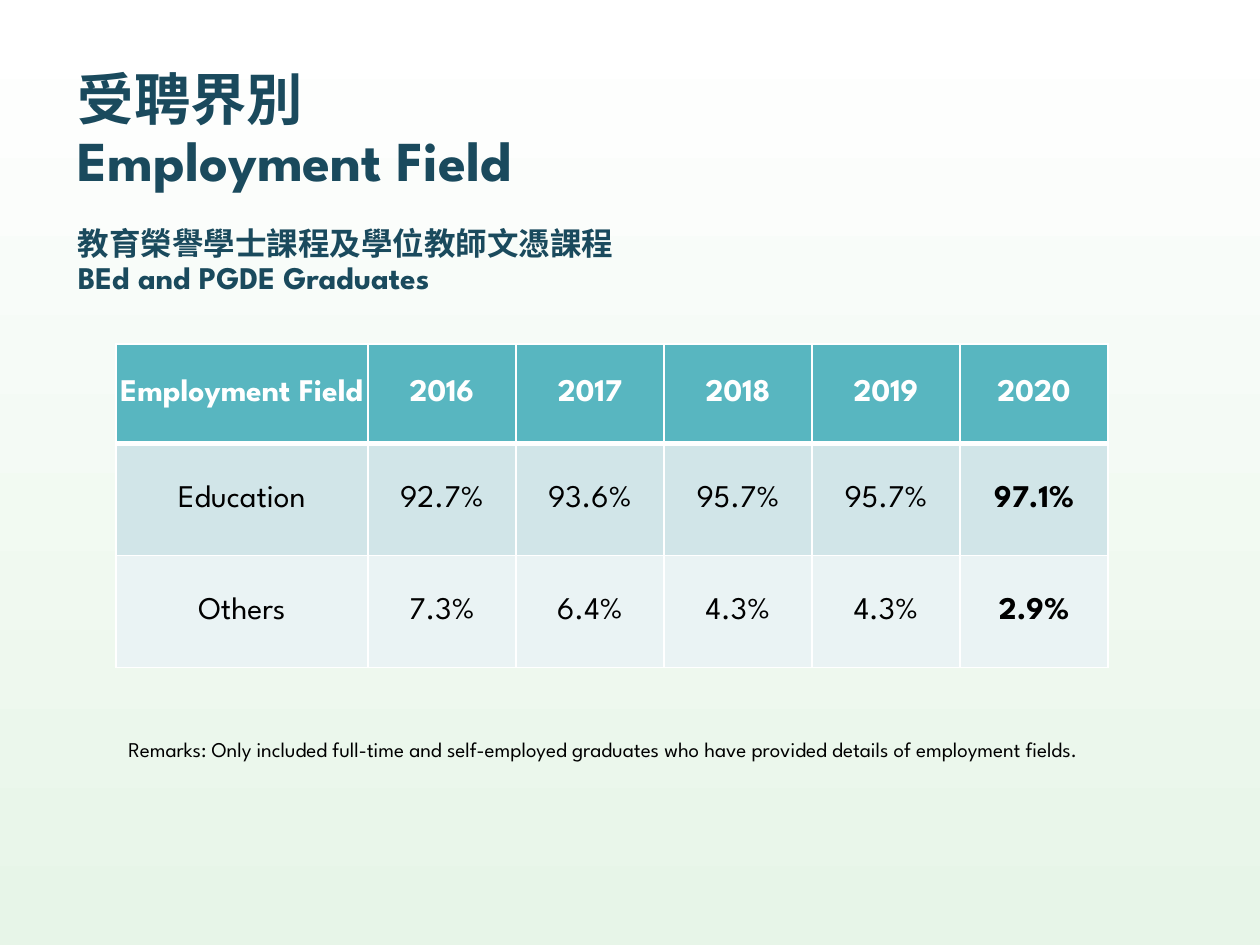
"""Build the employment field slide with its table of percentages by year."""
from lxml.etree import SubElement
from pptx import Presentation
from pptx.dml.color import RGBColor
from pptx.enum.text import MSO_ANCHOR, PP_ALIGN
from pptx.oxml.ns import qn
from pptx.util import Inches, Pt

FONT = "League Spartan"
COLORS = {
    "top": "FFFFFF", "bottom": "E7F5E8", "title": "1A4A5D", "text": "000000",
    "white": "FFFFFF", "header": "58B6C0", "dark_band": "D1E5E8", "light_band": "EAF3F4",
}
HEADING = [
    ("受聘界別", 32.2, 0),
    ("Employment Field", 32.2, 0),
    ("教育榮譽學士課程及學位教師文憑課程", 18, 20),
    ("BEd and PGDE Graduates", 18, 0),
]
REMARK = ("Remarks: Only included full-time and self-employed graduates "
          "who have provided details of employment fields.")
ROWS = [
    ("Employment Field", "2016", "2017", "2018", "2019", "2020"),
    ("Education", "92.7%", "93.6%", "95.7%", "95.7%", "97.1%"),
    ("Others", "7.3%", "6.4%", "4.3%", "4.3%", "2.9%"),
]
ROW_FILLS = ["header", "dark_band", "light_band"]
ROW_HEIGHTS = [0.79, 0.89, 0.89]
COLUMN_WIDTHS = [2] + [1.175] * 5


def color(name):
    return RGBColor.from_string(COLORS[name])


def add_span(paragraph, text, size, color_name, bold=False):
    span = paragraph.add_run()
    span.text = text
    span.font.name = FONT
    span.font.size = Pt(size)
    span.font.bold = bold
    span.font.color.rgb = color(color_name)


def add_box(page, left, top, width, height):
    box = page.shapes.add_textbox(Inches(left), Inches(top), Inches(width), Inches(height))
    box.text_frame.word_wrap = True
    return box.text_frame


def set_borders(cell, widths):
    properties = cell._tc.get_or_add_tcPr()
    for side, width in widths.items():
        line = SubElement(properties, qn(f"a:ln{side}"), w=str(Pt(width)))
        fill = SubElement(line, qn("a:solidFill"))
        SubElement(fill, qn("a:srgbClr"), val=COLORS["white"])


def add_background(page):
    fill = page.background.fill
    fill.gradient()
    fill.gradient_angle = 270
    for stop, position, name in zip(fill.gradient_stops, (0, 1), ("top", "bottom")):
        stop.position = position
        stop.color.rgb = color(name)


def add_heading(page):
    frame = add_box(page, 0.52, 0.52, 8.96, 1.81)
    for index, (text, size, gap) in enumerate(HEADING):
        paragraph = frame.paragraphs[0] if index == 0 else frame.add_paragraph()
        paragraph.line_spacing = 0.9
        paragraph.space_before = Pt(gap)
        add_span(paragraph, text, size, "title", True)


def add_field_table(page):
    table = page.shapes.add_table(
        len(ROWS), len(COLUMN_WIDTHS), Inches(0.92), Inches(2.73),
        Inches(sum(COLUMN_WIDTHS)), Inches(sum(ROW_HEIGHTS))).table
    for column, width in zip(table.columns, COLUMN_WIDTHS):
        column.width = Inches(width)
    for row_index, values in enumerate(ROWS):
        table.rows[row_index].height = Inches(ROW_HEIGHTS[row_index])
        is_header = row_index == 0
        for column_index, value in enumerate(values):
            cell = table.cell(row_index, column_index)
            set_borders(cell, {"L": 1, "R": 1, "T": 3 if row_index == 1 else 1,
                               "B": 3 if is_header else 1})
            cell.fill.solid()
            cell.fill.fore_color.rgb = color(ROW_FILLS[row_index])
            cell.vertical_anchor = MSO_ANCHOR.MIDDLE
            cell.margin_left = cell.margin_right = cell.margin_top = Inches(0.01)
            cell.margin_bottom = 0
            paragraph = cell.text_frame.paragraphs[0]
            paragraph.alignment = PP_ALIGN.CENTER
            is_latest = column_index == len(values) - 1
            add_span(paragraph, value, 18, "white" if is_header else "text",
                     is_header or is_latest)


def main():
    deck = Presentation()
    deck.slide_width, deck.slide_height = Inches(10), Inches(7.5)
    page = deck.slides.add_slide(deck.slide_layouts[6])
    add_background(page)
    remark = add_box(page, 0.92, 5.8, 7.99, 0.5)
    add_span(remark.paragraphs[0], REMARK, 12, "text")
    add_field_table(page)
    add_heading(page)
    deck.save("out.pptx")


if __name__ == "__main__":
    main()
